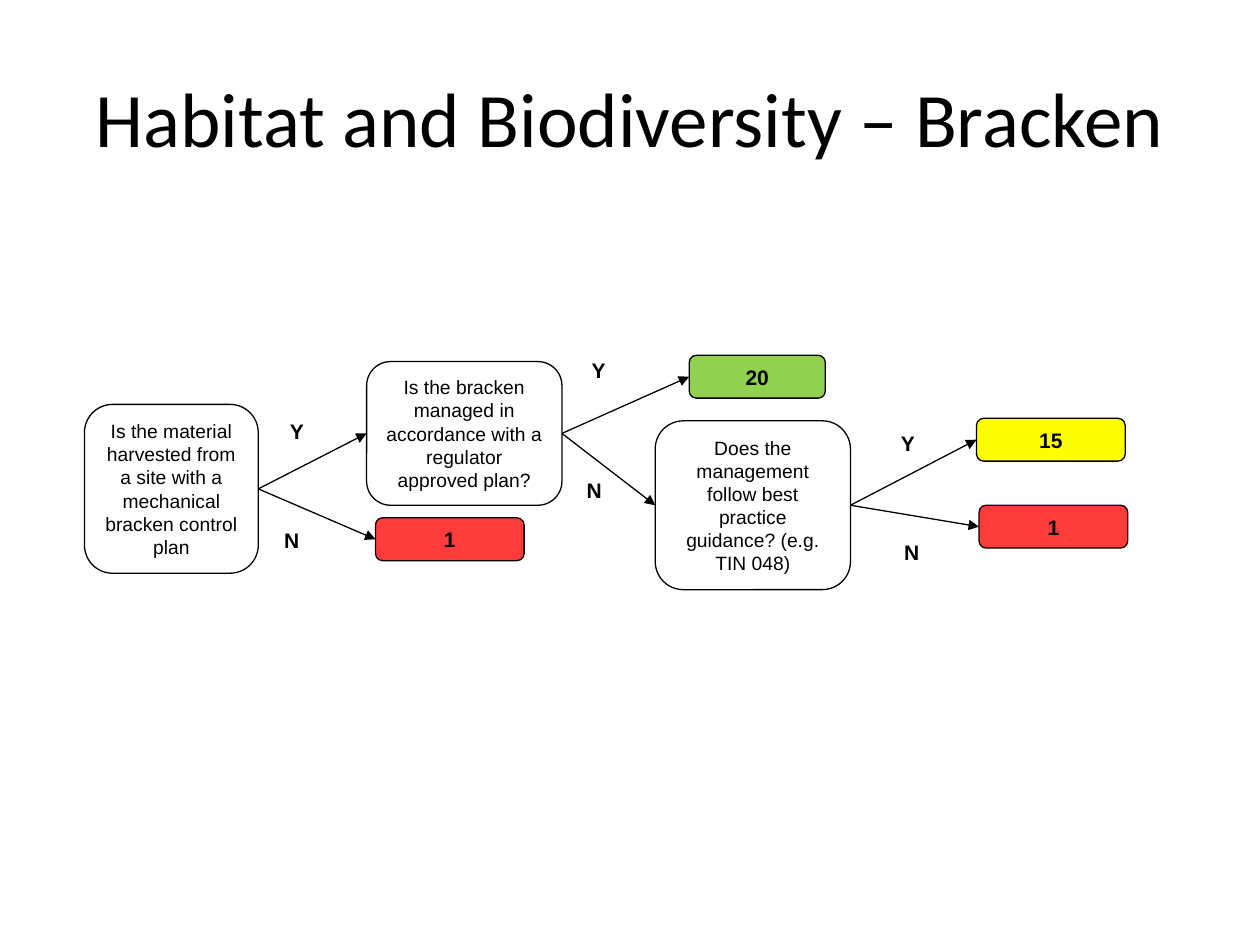
from lxml import etree
from pptx import Presentation
from pptx import util as u
from pptx.dml import color
from pptx.enum import shapes, text
from pptx.oxml import ns

BLACK = "000000"
RED = "FF3B3B"


def rgb(code):
    return color.RGBColor.from_string(code)


def write(frame, words, size=12, bold=False, font="Arial", anchor=text.MSO_ANCHOR.MIDDLE):
    frame.word_wrap = True
    frame.vertical_anchor = anchor
    para = frame.paragraphs[0]
    para.alignment = text.PP_ALIGN.CENTER
    run = para.add_run()
    run.text = words
    run.font.name = font
    run.font.size = u.Pt(size)
    run.font.bold = bold
    run.font.color.rgb = rgb(BLACK)


def place(*spot):
    return [u.Inches(n) for n in spot]


def box(slide, spot, words, fill="FFFFFF", **form):
    shape = slide.shapes.add_shape(
        shapes.MSO_SHAPE.FLOWCHART_ALTERNATE_PROCESS, *place(*spot))
    shape.shadow.inherit = False
    shape.fill.solid()
    shape.fill.fore_color.rgb = rgb(fill)
    shape.line.color.rgb = rgb(BLACK)
    shape.line.width = u.Pt(0.75)
    write(shape.text_frame, words, **form)
    return shape


def ask(slide, spot, words):
    return box(slide, spot, words, size=11)


def score(slide, left, top, words, fill, width=1.18):
    return box(slide, (left, top, width, 0.34), words, fill, bold=True)


def label(slide, left, top, words, width=0.45):
    area = slide.shapes.add_textbox(*place(left, top, width, 0.3))
    write(area.text_frame, words, bold=True, anchor=text.MSO_ANCHOR.TOP)


def arrow(slide, start, end):
    line = slide.shapes.add_connector(shapes.MSO_CONNECTOR.STRAIGHT, 0, 0, 0, 0)
    line.begin_connect(start, 3)
    line.end_connect(end, 1)
    line.line.color.rgb = rgb(BLACK)
    line.line.width = u.Pt(0.75)
    etree.SubElement(line.line._get_or_add_ln(), ns.qn("a:tailEnd"), type="triangle")
    etree.SubElement(line._element.spPr, ns.qn("a:effectLst"))


def main():
    deck = Presentation()
    deck.slide_width, deck.slide_height = place(10, 7.5)
    slide = deck.slides.add_slide(deck.slide_layouts[5])

    title = slide.shapes.title
    title.left, title.top, title.width, title.height = place(0.5, 0.3, 9, 1.25)
    write(title.text_frame, "Habitat and Biodiversity – Bracken", size=44, font="Calibri")

    site = ask(slide, (0.67, 3.21, 1.38, 1.34),
               "Is the material harvested from a site with a mechanical bracken control plan")
    plan = ask(slide, (2.91, 2.87, 1.55, 1.14),
               "Is the bracken managed in accordance with a regulator approved plan?")
    guide = ask(slide, (5.2, 3.34, 1.55, 1.34),
                "Does the management follow best practice guidance? (e.g. TIN 048)")

    fail = score(slide, 2.98, 4.11, "1", RED)
    best = score(slide, 5.47, 2.82, "20", "92D050", width=1.08)
    good = score(slide, 7.75, 3.32, "15", "FFFF00")
    poor = score(slide, 7.77, 4.01, "1", RED)

    for start, yes, no in ((site, plan, fail), (plan, best, guide), (guide, good, poor)):
        arrow(slide, start, yes)
        arrow(slide, start, no)

    label(slide, 2.13, 3.27, "Y")
    label(slide, 2.09, 4.14, "N")
    label(slide, 4.56, 2.79, "Y", width=0.38)
    label(slide, 4.49, 3.74, "N")
    label(slide, 7.02, 3.37, "Y", width=0.37)
    label(slide, 7.01, 4.23, "N")

    deck.save("out.pptx")


if __name__ == "__main__":
    main()
